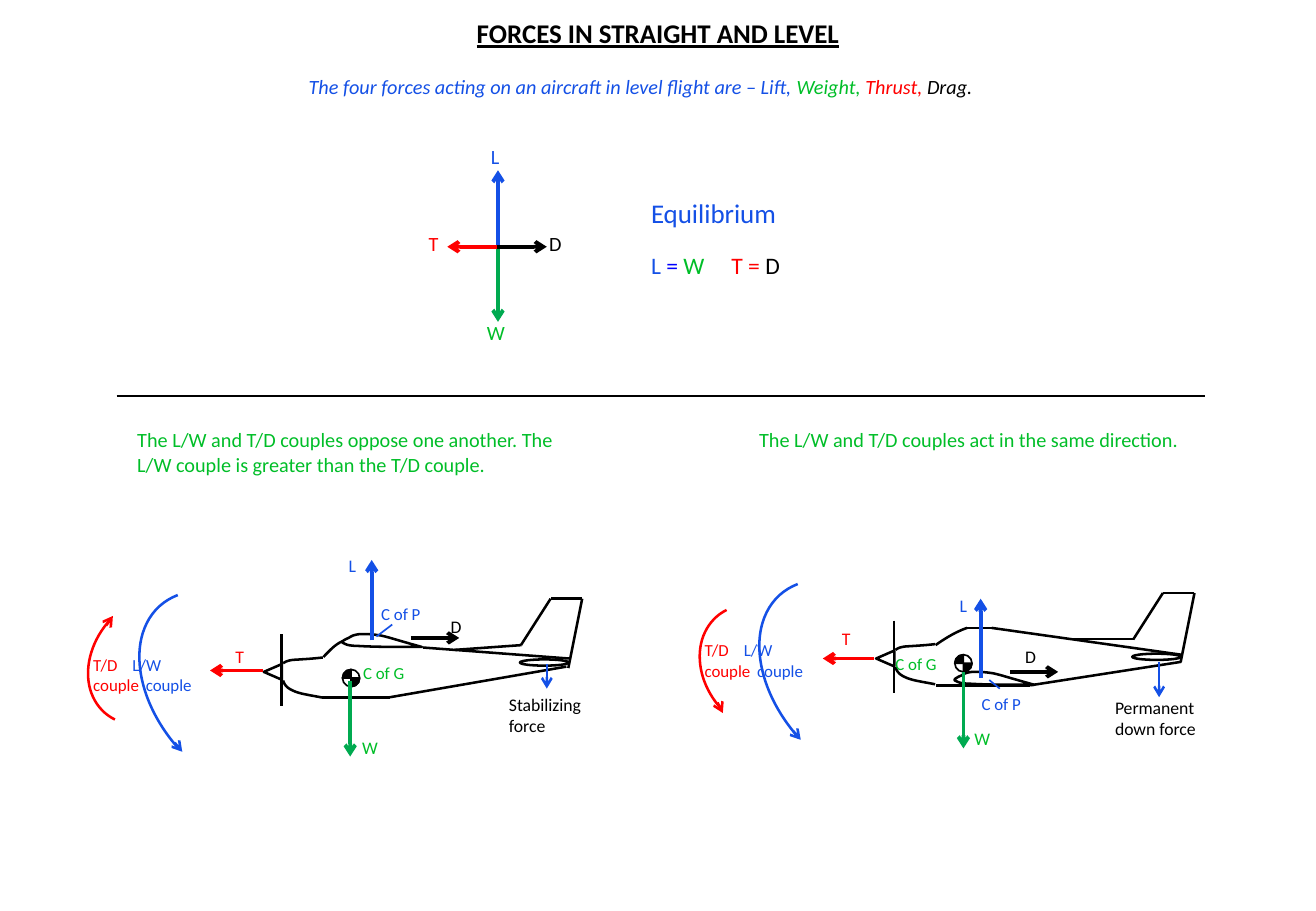
from itertools import pairwise

from lxml import etree
from pptx import Presentation
from pptx.dml.color import RGBColor
from pptx.enum.shapes import MSO_CONNECTOR, MSO_SHAPE
from pptx.enum.text import PP_ALIGN
from pptx.oxml.ns import qn
from pptx.util import Cm, Pt

STRAIGHT = MSO_CONNECTOR.STRAIGHT
ARC, OVAL, PIE = MSO_SHAPE.ARC, MSO_SHAPE.OVAL, MSO_SHAPE.PIE
CONE = MSO_SHAPE.ISOSCELES_TRIANGLE
CENTER = PP_ALIGN.CENTER
BLACK = RGBColor(0, 0, 0)
BLUE = RGBColor(0x14, 0x50, 0xE6)
PURE = RGBColor(0, 0, 0xFF)
RED = RGBColor(0xFF, 0, 0)
GREEN = RGBColor(0, 0xBE, 0x28)
LEAF = RGBColor(0, 0xAA, 0x50)

# Cubic curves: a start point, then three points per piece, in cm
COWL_TOP = [(.86, .49), (.61, .52), (.38, .53), (.23, .54),
            (.1, .56), (.08, .58), (.03, .61)]
COWL_LOW = [(.86, 1.33), (.61, 1.28), (.36, 1.25), (.23, 1.18),
            (.09, 1.12), (.05, 1.04), (.03, .97)]
WING = [(1.66, .27), (1.14, .27), (.64, .27), (.36, .25),
        (.08, .25), (.05, .2), (0, .18), (-.03, .15), (.08, .1), (.13, .08),
        (.2, .03), (.29, 0), (.41, 0), (.51, 0), (.6, 0), (.8, .03),
        (1.02, .08), (1.32, .18), (1.66, .27)]
FIN = [(-.29, 1.45), (0, 0), (-.66, 0), (-1.28, .97)]


def shift(points, origin):
    return [(x + origin[0], y + origin[1]) for x, y in points]


def line(slide, start, end, color=BLACK, width=1.5, head=False):
    link = slide.shapes.add_connector(
        STRAIGHT, *(Cm(v) for v in (*start, *end)))
    link.line.color.rgb = color
    link.line.width = Pt(width)
    props = link.element.spPr
    if head:
        etree.SubElement(props.find(qn("a:ln")), qn("a:tailEnd"), type="arrow")
    etree.SubElement(props, qn("a:effectLst"))


def route(slide, points):
    for start, end in pairwise(points):
        line(slide, start, end)


def style(shape, color=BLACK, width=1.5, fill=None):
    shape.shadow.inherit = False
    shape.line.color.rgb = color
    shape.line.width = Pt(width)
    if fill is None:
        shape.fill.background()
    else:
        shape.fill.solid()
        shape.fill.fore_color.rgb = fill


def form(slide, kind, box, angles=(), turn=0, **look):
    shape = slide.shapes.add_shape(kind, *(Cm(v) for v in box))
    for i, angle in enumerate(angles):
        shape.adjustments[i] = angle
    shape.rotation = turn
    style(shape, **look)
    return shape


def curve(slide, points, steps=8):
    """Draw joined cubic curves as one open outline."""
    dots = []
    for i in range(0, len(points) - 1, 3):
        for t in (n / steps for n in range(1, steps + 1)):
            parts = ((1 - t) ** 3, 3 * t * (1 - t) ** 2,
                     3 * t * t * (1 - t), t ** 3)
            dots.append(tuple(
                Cm(sum(k * p[axis] for k, p in zip(parts, points[i:i + 4])))
                for axis in (0, 1)))
    pen = slide.shapes.build_freeform(*(Cm(v) for v in points[0]))
    pen.add_line_segments(dots, close=False)
    style(pen.convert_to_shape())


def write(slide, box, paras, size, align=None, gap=0, tabs=(), sizes=(), **look):
    """Write paragraphs, each a list of (text, color) runs."""
    frame = slide.shapes.add_textbox(*(Cm(v) for v in box)).text_frame
    frame.word_wrap = True
    for i, runs in enumerate(paras):
        para = frame.add_paragraph() if i else frame.paragraphs[0]
        para.alignment = align
        if i and gap:
            para.space_before = Pt(gap)
        if i < len(tabs) and tabs[i]:
            stops = etree.SubElement(
                para._p.get_or_add_pPr(), qn("a:tabLst"))
            etree.SubElement(stops, qn("a:tab"), pos=str(Cm(tabs[i])), algn="l")
        points = sizes[i] if sizes else size
        for text, color in runs:
            run = para.add_run()
            run.text = text
            run.font.color.rgb = color
            for name, value in {"name": "Calibri", "size": Pt(points),
                                **look}.items():
                setattr(run.font, name, value)


def label(slide, text, left, top, color, size=10.5, width=1.83):
    write(slide, (left, top, width, .73), [[(text, color)]], size)


def mark(slide, left, top):
    """Draw the centre of gravity symbol."""
    box = (left, top, .36, .36)
    form(slide, OVAL, box, width=1)
    for angles in ((108, 162), (0, 54)):
        form(slide, PIE, box, angles, width=1, fill=BLACK)


def plane(slide, nose, wing, tail, mass, hood, hull):
    mark(slide, *mass)
    x, y = nose
    form(slide, CONE, (x - .35, y + .6, .33, .38), turn=270)
    line(slide, nose, (x, y + 1.51))
    for part, origin in ((COWL_TOP, nose), (COWL_LOW, nose), (WING, wing)):
        curve(slide, shift(part, origin))
    curve(slide, hood)
    route(slide, shift(FIN, tail))
    form(slide, OVAL, (tail[0] - 1.3, tail[1] + 1.27, 1.02, .13))
    for points in hull:
        route(slide, points)


def bend(slide, box, color, start, end, flip=False):
    """Draw a turning arrow: an arc and its head."""
    arc = form(slide, ARC, box, (162, 6.13), 312 if flip else 228, color=color)
    if flip:
        arc.element.spPr.find(qn("a:xfrm")).set("flipH", "1")
    line(slide, start, end, color, head=True)


def couples(slide, left, top):
    write(slide, (left, top, 3.6, 1.14),
          [[("T/D", RED), ("\tL/W", BLUE)],
           [("couple", RED), ("\tcouple", BLUE)]], 10, tabs=(.82, 1.1))


def main():
    deck = Presentation()
    deck.slide_width, deck.slide_height = Cm(27.51), Cm(19.05)
    slide = deck.slides.add_slide(deck.slide_layouts[6])

    write(slide, (0, .23, 27.51, .94),
          [[("FORCES IN STRAIGHT AND LEVEL", BLACK)]],
          16, CENTER, bold=True, underline=True)
    write(slide, (4.32, 1.42, 18.14, .76),
          [[("The four forces acting on an aircraft in level flight are – Lift, ",
             BLUE), ("Weight, ", GREEN), ("Thrust, ", RED), ("Drag.", BLACK)]],
          12, CENTER, italic=True)
    write(slide, (13.36, 3.99, 5.44, 2.01),
          [[("Equilibrium", BLUE)],
           [("L ", BLUE), ("= ", PURE), ("W", GREEN),
            ("\tT = ", RED), ("D", BLACK)]],
          14, gap=13, tabs=(0, 1.68), sizes=(16, 14))
    line(slide, (2.44, 8.28), (25.2, 8.28), width=1)
    for left, text in (
            (2.62, "The L/W and T/D couples oppose one another. "
                   "The L/W couple is greater than the T/D couple."),
            (15.62, "The L/W and T/D couples act in the same direction.")):
        label(slide, text, left, 8.82, GREEN, 12, 9.45)

    plane(slide, (5.89, 13.26), (7.16, 13.26), (12.17, 12.52), (7.16, 14),
          [(6.76, 13.74), (6.89, 13.61), (7, 13.48), (7.16, 13.41)],
          [[(10.9, 13.49), (9.5, 13.59)], [(11.89, 13.77), (8.84, 13.54)],
           [(11.84, 13.94), (8.15, 14.58), (6.73, 14.58)]])
    plane(slide, (18.69, 12.98), (19.96, 14.05), (24.97, 12.4), (19.96, 13.69),
          [(19.56, 13.49), (19.79, 13.33), (19.99, 13.21), (20.22, 13.13)],
          [[(23.7, 13.36), (22.3, 13.36)],
           [(24.69, 13.69), (20.73, 13.13), (20.22, 13.13)],
           [(24.69, 13.84), (21.54, 14.33), (19.56, 14.33)]])

    for start, end, color in (
            ((10.41, 5.21), (10.41, 3.56), BLUE),
            ((10.41, 5.16), (10.41, 6.73), LEAF),
            ((10.41, 5.16), (9.35, 5.16), RED),
            ((10.39, 5.16), (11.43, 5.16), BLACK),
            ((7.32, 14.25), (7.32, 15.82), LEAF),
            ((7.77, 13.39), (7.77, 11.71), BLUE),
            ((5.49, 14.02), (4.39, 14.02), RED),
            ((8.59, 13.34), (9.6, 13.34), BLACK),
            ((20.5, 14.17), (20.5, 12.52), BLUE),
            ((20.14, 14.05), (20.14, 15.65), LEAF),
            ((18.26, 13.77), (17.2, 13.77), RED),
            ((21.11, 14.05), (22.12, 14.05), BLACK)):
        line(slide, start, end, color, 2.25, True)
    for x, top, foot in ((11.43, 13.89, 14.4), (24.23, 13.84, 14.58)):
        line(slide, (x, top), (x, foot), BLUE, head=True)
    for start, end in (((8.2, 13.06), (7.87, 13.31)),
                       ((20.9, 14.4), (20.68, 14.22))):
        line(slide, start, end, BLUE, 1)

    bend(slide, (1.68, 12.57, 3.02, 2.41), RED,
         (2.29, 12.98), (2.36, 12.88), True)
    bend(slide, (2.51, 12.83, 5, 3.4), BLUE, (3.66, 15.54), (3.81, 15.72))
    bend(slide, (14.48, 12.8, 2.97, 2.41), RED, (15.06, 14.81), (15.11, 14.91))
    bend(slide, (15.47, 12.6, 5, 3.4), BLUE, (16.61, 15.32), (16.74, 15.47))
    couples(slide, 1.7, 13.56)
    couples(slide, 14.48, 13.26)

    for size, rows in {
            12: (("L", 10.01, 2.9, BLUE), ("D", 11.23, 4.72, BLACK),
                 ("W", 9.93, 6.58, GREEN), ("T", 8.71, 4.72, RED)),
            10.5: (("L", 7.04, 11.48, BLUE), ("W", 7.32, 15.29, GREEN),
                   ("T", 4.67, 13.39, RED), ("D", 9.17, 12.75, BLACK),
                   ("L", 19.81, 12.32, BLUE), ("W", 20.12, 15.09, GREEN),
                   ("T", 17.35, 13, RED), ("D", 21.18, 13.39, BLACK)),
            10: (("C of G", 7.34, 13.74, GREEN), ("C of P", 7.72, 12.5, BLUE),
                 ("C of G", 18.47, 13.54, GREEN),
                 ("C of P", 20.27, 14.38, BLUE))}.items():
        for row in rows:
            label(slide, *row, size)
    label(slide, "Stabilizing force", 10.39, 14.38, BLACK, width=2.79)
    label(slide, "Permanent down force", 23.06, 14.45, BLACK, width=2.72)
    deck.save("out.pptx")


if __name__ == "__main__":
    main()
